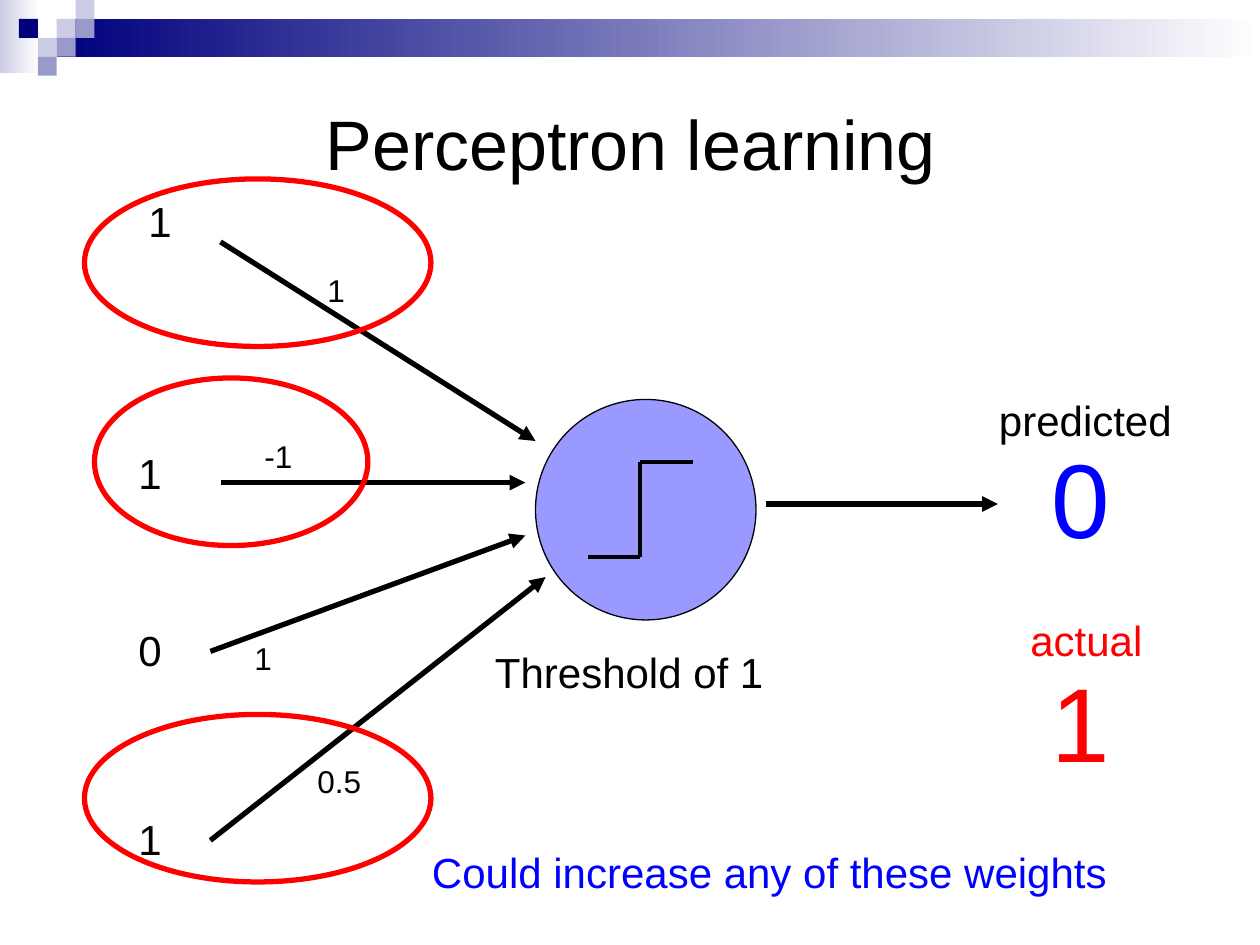
from pptx import Presentation
from pptx.dml.color import RGBColor
from pptx.enum.shapes import MSO_CONNECTOR, MSO_SHAPE
from pptx.enum.text import MSO_ANCHOR, PP_ALIGN
from pptx.oxml.ns import qn
from pptx.util import Inches, Pt
from lxml import etree

LINE = MSO_CONNECTOR.STRAIGHT
RECT = MSO_SHAPE.RECTANGLE
OVAL = MSO_SHAPE.OVAL
TOP = MSO_ANCHOR.TOP
CENTER = PP_ALIGN.CENTER
LEFT = PP_ALIGN.LEFT

HUES = {
    "black": "000000", "white": "FFFFFF", "red": "FF0000", "blue": "0000FF",
    "navy": "00007D", "pale": "CCCCE6", "mid": "9999CC", "node": "9999FF",
}
FRAME = {"vertical_anchor": TOP, "word_wrap": True}
TILE = 0.15


def hue(name):
    return RGBColor.from_string(HUES[name])


def apply(item, values):
    for key, value in values.items():
        setattr(item, key, value)


def place(box, x, y):
    return Inches(box[0] + x), Inches(box[1] + y)


def write(shape, text, size, color="black", align=LEFT, wrap=True):
    frame = shape.text_frame
    frame.text = text
    apply(frame, {**FRAME, "word_wrap": wrap})
    para = frame.paragraphs[0]
    para.alignment = align
    apply(para.font, {"name": "Arial", "size": Pt(size)})
    para.font.color.rgb = hue(color)


def label(slide, box, x, y, w, h, text, size, color="black", wrap=True):
    shape = slide.shapes.add_textbox(*place(box, x, y), Inches(w), Inches(h))
    write(shape, text, size, color, wrap=wrap)


def solid(slide, box, kind, x, y, w, h, fill=None, edge=None, width=0.75):
    shape = slide.shapes.add_shape(kind, *place(box, x, y), Inches(w), Inches(h))
    shape.shadow.inherit = False
    if fill:
        shape.fill.solid()
        shape.fill.fore_color.rgb = hue(fill)
    else:
        shape.fill.background()
    if edge:
        shape.line.color.rgb = hue(edge)
        shape.line.width = Pt(width)
    else:
        shape.line.fill.background()
    return shape


def fade(shape, start):
    shape.fill.gradient()
    shape.fill.gradient_angle = 0
    for stop, name in zip(shape.fill.gradient_stops, (start, "white")):
        stop.color.rgb = hue(name)


def link(slide, box, start, end, width=3, arrow=True):
    line = slide.shapes.add_connector(LINE, *place(box, *start), *place(box, *end))
    line.line.color.rgb = hue("black")
    line.line.width = Pt(width)
    if arrow:
        etree.SubElement(line.line._get_or_add_ln(), qn("a:tailEnd"), type="triangle")
    etree.SubElement(line._element.spPr, qn("a:effectLst"))


def banner(slide, box):
    fade(solid(slide, box, RECT, 0, 0, 0.31, 0.58), "pale")
    fade(solid(slide, box, RECT, 0.45, TILE, 9.55, 2 * TILE), "navy")
    tiles = [(3, 1, "pale"), (4, 0, "pale"), (4, 1, "mid"), (2, 2, "pale"),
             (1, 1, "navy"), (3, 2, "mid"), (2, 3, "mid")]
    for col, row, fill in tiles:
        solid(slide, box, RECT, col * TILE, row * TILE, TILE, TILE, fill)


def title(slide, box, text):
    shape = slide.shapes.title
    left, top = place(box, 0, 0)
    apply(shape, {"left": left, "top": top,
                  "width": Inches(9.17), "height": Inches(0.77)})
    write(shape, text, 40, align=CENTER)


def inputs(slide, box):
    rows = [
        ("1", (0.41, 0.08, 1.08), (1.08, 0.5), (3.58, 2.08), "1", (1.83, 0.68)),
        ("1", (0.33, 2.08, 0.67), (1.08, 2.41), (3.5, 2.41), "-1", (1.33, 2)),
        ("0", (0.33, 3.49, 0.67), (1, 3.75), (3.5, 2.83), "1", (1.25, 3.6)),
        ("1", (0.33, 4.99, 0.67), (1, 5.25), (3.66, 3.16), "0.5", (1.75, 4.58)),
    ]
    for value, (x, y, w), start, end, weight, spot in rows:
        link(slide, box, start, end)
        label(slide, box, *spot, 1.5, 0.4, weight, 18)
        label(slide, box, x, y, w, 0.5, value, 24)


def neuron(slide, box):
    solid(slide, box, OVAL, 0.42, 0, 1.75, 1.75, "node", "black")
    step = [(0.84, 1.25), (1.25, 1.25), (1.25, 0.5), (1.67, 0.5)]
    for start, end in zip(step, step[1:]):
        link(slide, box, start, end, 2.25, False)
    label(slide, box, 0, 1.91, 2.75, 0.5, "Threshold of 1", 24)
    link(slide, box, (2.25, 0.83), (4.09, 0.83))


def output(slide, box):
    label(slide, box, 0, 0, 1.59, 0.5, "predicted", 24, wrap=False)
    label(slide, box, 0.42, 0.31, 1.5, 1.11, "0", 60, "blue")
    label(slide, box, 0.25, 1.75, 1.1, 0.5, "actual", 24, "red", False)
    label(slide, box, 0.42, 2.09, 1.5, 1.11, "1", 60, "red")


def marks(slide, box):
    for x, y, w in [(0.08, 1.58, 2.17), (0, 0, 2.75), (0, 4.25, 2.75)]:
        solid(slide, box, OVAL, x, y, w, 1.33, edge="red", width=3)
    label(slide, box, 2.66, 5.25, 5.61, 0.5,
          "Could increase any of these weights", 24, "blue", False)


def main():
    deck = Presentation()
    apply(deck, {"slide_width": Inches(10), "slide_height": Inches(7.5)})
    slide = deck.slides.add_slide(deck.slide_layouts[5])
    banner(slide, (0, 0))
    title(slide, (0.42, 0.75), "Perceptron learning")
    inputs(slide, (0.67, 1.42))
    neuron(slide, (3.83, 3.17))
    output(slide, (7.83, 3.08))
    marks(slide, (0.67, 1.42))
    deck.save("out.pptx")


if __name__ == "__main__":
    main()
